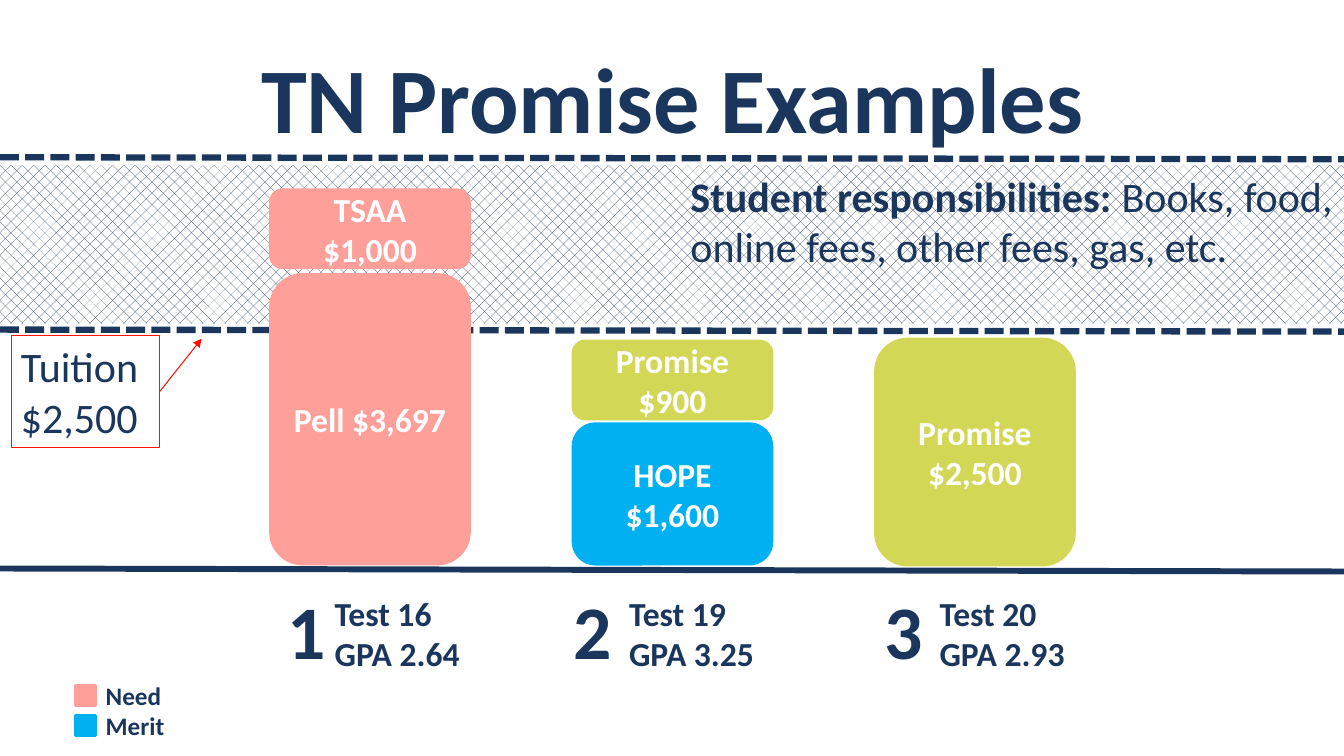
import pptx
import pptx.util
import pptx.dml.color
import pptx.enum.dml
import pptx.enum.shapes
import pptx.enum.text
import pptx.oxml.ns
from lxml import etree

Inches = pptx.util.Inches
Pt = pptx.util.Pt
RGBColor = pptx.dml.color.RGBColor
MSO_SHAPE = pptx.enum.shapes.MSO_SHAPE
MSO_ANCHOR = pptx.enum.text.MSO_ANCHOR
MSO_AUTO_SIZE = pptx.enum.text.MSO_AUTO_SIZE
PP_ALIGN = pptx.enum.text.PP_ALIGN
DASH = pptx.enum.dml.MSO_LINE.SQUARE_DOT

NAVY = RGBColor(0x1B, 0x36, 0x5D)
WHITE = RGBColor(0xFF, 0xFF, 0xFF)
RED = RGBColor(0xFF, 0x0F, 0x00)
NEED = RGBColor(0xFF, 0x9F, 0x99)
MERIT = RGBColor(0x00, 0xB0, 0xF0)
PROMISE = RGBColor(0xD2, 0xD7, 0x55)


def add_run(paragraph, text, size, bold=True, color=NAVY):
    run = paragraph.add_run()
    run.text = text
    run.font.name = "Calibri"
    run.font.size = Pt(size)
    run.font.bold = bold
    run.font.color.rgb = color


def add_line(x1, y1, x2, y2, color, width):
    line = slide.shapes.add_connector(
        pptx.enum.shapes.MSO_CONNECTOR.STRAIGHT,
        Inches(x1), Inches(y1), Inches(x2), Inches(y2))
    line.line.color.rgb = color
    line.line.width = Pt(width)
    etree.SubElement(line._element.spPr, pptx.oxml.ns.qn("a:effectLst"))
    return line


presentation = pptx.Presentation()
presentation.slide_width = Inches(13.33)
presentation.slide_height = Inches(7.5)
slide = presentation.slides.add_slide(presentation.slide_layouts[5])

title = slide.shapes.title
title.left, title.top = Inches(0.67), Inches(0.33)
title.width, title.height = Inches(12), Inches(1.25)
title.text_frame.auto_size = MSO_AUTO_SIZE.NONE
title.text_frame.vertical_anchor = MSO_ANCHOR.MIDDLE
title.text_frame.paragraphs[0].alignment = PP_ALIGN.CENTER
add_run(title.text_frame.paragraphs[0], "TN Promise Examples", 66)

uncovered_band = slide.shapes.add_shape(
    MSO_SHAPE.RECTANGLE, 0, Inches(1.64), Inches(13.33), Inches(1.57))
uncovered_band.shadow.inherit = False
uncovered_band.fill.patterned()
uncovered_band.fill.pattern = pptx.enum.dml.MSO_PATTERN.PERCENT_25
uncovered_band.fill.fore_color.rgb = NAVY
uncovered_band.fill.back_color.rgb = WHITE
uncovered_band.line.fill.background()

for y in (1.56, 3.27):
    add_line(0, y, 13.35, y + 0.02, NAVY, 4.5).line.dash_style = DASH
add_line(-0.02, 5.64, 13.33, 5.67, NAVY, 4.25)

tuition = slide.shapes.add_textbox(Inches(0.11), Inches(3.33), Inches(1.47), Inches(1.11))
tuition.line.color.rgb = RED
tuition.line.width = Pt(0.75)
tuition.text_frame.word_wrap = False
tuition.text_frame.auto_size = MSO_AUTO_SIZE.SHAPE_TO_FIT_TEXT
add_run(tuition.text_frame.paragraphs[0], "Tuition", 30, False)
add_run(tuition.text_frame.add_paragraph(), "$2,500", 30, False)

tuition_arrow = add_line(1.58, 3.89, 2, 3.36, RED, 0.75)
etree.SubElement(tuition_arrow.line._get_or_add_ln(),
                 pptx.oxml.ns.qn("a:tailEnd"), type="triangle")

awards = [
    (2.67, 2.71, 2.9, NEED, "Pell $3,697"),
    (2.67, 1.87, 0.8, NEED, "TSAA $1,000"),
    (5.67, 4.19, 1.42, MERIT, "HOPE $1,600"),
    (5.67, 3.37, 0.8, PROMISE, "Promise $900"),
    (8.67, 3.35, 2.27, PROMISE, "Promise $2,500"),
]
for left, top, height, color, label in awards:
    award = slide.shapes.add_shape(
        MSO_SHAPE.ROUNDED_RECTANGLE, Inches(left), Inches(top), Inches(2), Inches(height))
    award.shadow.inherit = False
    award.fill.solid()
    award.fill.fore_color.rgb = color
    award.line.fill.background()
    award.text_frame.word_wrap = True
    award.text_frame.vertical_anchor = MSO_ANCHOR.MIDDLE
    award.text_frame.paragraphs[0].alignment = PP_ALIGN.CENTER
    add_run(award.text_frame.paragraphs[0], label, 24, color=WHITE)

students = [
    ("1", 2.75, 3.22, "Test 16", "GPA 2.64"),
    ("2", 5.59, 6.14, "Test 19", "GPA 3.25"),
    ("3", 8.67, 9.22, "Test 20", "GPA 2.93"),
]
for number, number_left, scores_left, test, gpa in students:
    student = slide.shapes.add_textbox(
        Inches(number_left), Inches(5.74), Inches(0.5), Inches(1.01))
    student.text_frame.word_wrap = True
    add_run(student.text_frame.paragraphs[0], number, 54)
    scores = slide.shapes.add_textbox(
        Inches(scores_left), Inches(5.83), Inches(1.45), Inches(0.91))
    scores.text_frame.word_wrap = False
    scores_text = scores.text_frame.paragraphs[0]
    add_run(scores_text, test, 24)
    scores_text.add_line_break()
    add_run(scores_text, gpa, 24)

responsibilities = slide.shapes.add_textbox(
    Inches(6.75), Inches(1.64), Inches(6.58), Inches(1.11))
responsibilities.text_frame.word_wrap = True
responsibilities_text = responsibilities.text_frame.paragraphs[0]
add_run(responsibilities_text, "Student responsibilities: ", 30)
add_run(responsibilities_text, "Books, food, online fees, other fees, gas, etc.", 30, False)

legend = slide.shapes.add_group_shape()
for row, (label, color) in enumerate([("Need", NEED), ("Merit", MERIT)]):
    top = 6.8 + 0.3 * row
    swatch = legend.shapes.add_shape(
        MSO_SHAPE.RECTANGLE, Inches(0.75), Inches(top), Inches(0.2), Inches(0.2))
    swatch.shadow.inherit = False
    swatch.fill.solid()
    swatch.fill.fore_color.rgb = color
    swatch.line.color.rgb = color
    swatch.line.width = Pt(2)
    category = legend.shapes.add_textbox(
        Inches(0.95), Inches(top - 0.1), Inches(0.92), Inches(0.4))
    category.text_frame.word_wrap = True
    add_run(category.text_frame.paragraphs[0], label, 18)

presentation.save("out.pptx")
